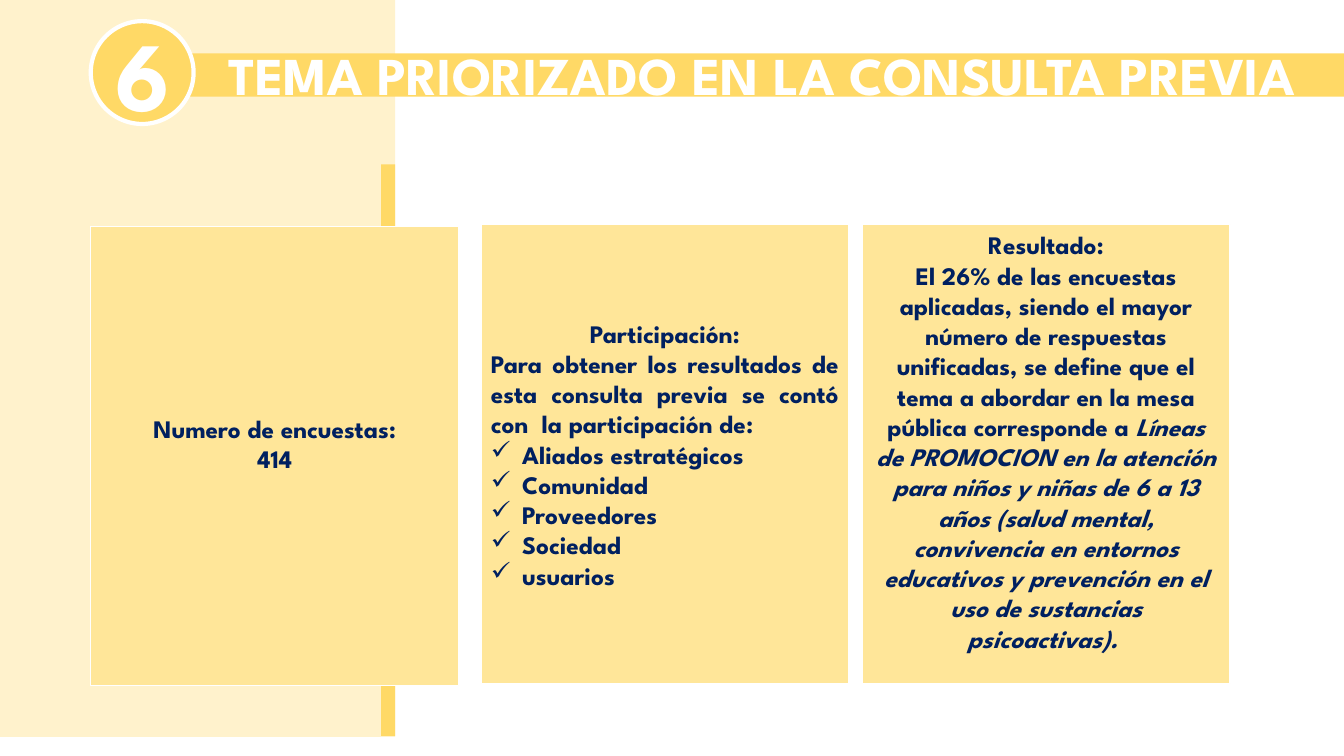
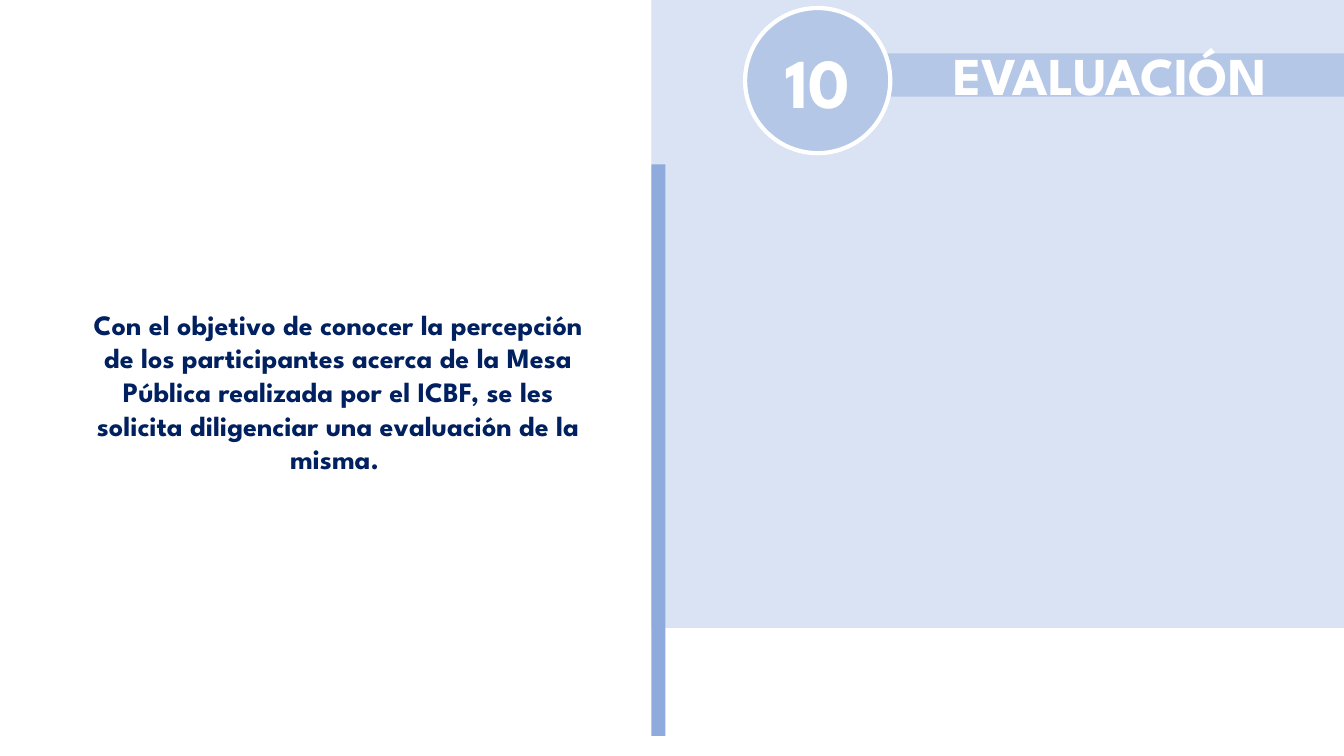
"""Build the consultation-topic and evaluation slides."""
import pptx
import pptx.dml.color
import pptx.enum.shapes
import pptx.enum.text
import pptx.oxml
import pptx.oxml.ns
import pptx.util

Inches = pptx.util.Inches
Align = pptx.enum.text.PP_ALIGN
Shape = pptx.enum.shapes.MSO_SHAPE

THEME = {
    "font": "League Spartan",
    "white": "FFFFFF",
    "navy": "002060",
    "card": "FFE699",
    "yellow": {"panel": "FFF2CC", "stripe": "FFD966", "band": "FFD966"},
    "blue": {"panel": "DAE3F3", "stripe": "8FAADC", "band": "B4C7E7"},
    "title": 38,
    "message": 20,
    "body": 18,
}


def add_block(slide, box, fill, kind=Shape.RECTANGLE, outline=None):
    """Draw a filled shape, with a white outline when a width is given."""
    block = slide.shapes.add_shape(kind, *map(Inches, box))
    block.shadow.inherit = False
    block.fill.solid()
    block.fill.fore_color.rgb = pptx.dml.color.RGBColor.from_string(fill)
    if outline:
        block.line.color.rgb = pptx.dml.color.RGBColor.from_string(THEME["white"])
        block.line.width = pptx.util.Pt(outline)
    else:
        block.line.fill.background()
    block.text_frame.word_wrap = True
    block.text_frame.vertical_anchor = pptx.enum.text.MSO_ANCHOR.MIDDLE
    return block


def add_text(holder, text, size=THEME["body"], color=THEME["navy"],
             align=Align.CENTER, bullet=None, italic_end=""):
    """Append one paragraph, optionally bulleted or ending in italics."""
    frame = holder.text_frame
    frame.word_wrap = True
    paragraph = frame.add_paragraph() if frame.text else frame.paragraphs[0]
    paragraph.alignment = align
    if bullet:
        properties = paragraph._p.get_or_add_pPr()
        properties.set("marL", str(Inches(0.31)))
        properties.set("indent", str(-Inches(0.31)))
        properties.append(pptx.oxml.parse_xml(
            f'<a:buChar {pptx.oxml.ns.nsdecls("a")} char="{bullet}"/>'))
    for part, italic in ((text, None), (italic_end, True)):
        if part:
            run = paragraph.add_run()
            run.text = part
            run.font.name = THEME["font"]
            run.font.size = pptx.util.Pt(size)
            run.font.bold = True
            run.font.italic = italic
            run.font.color.rgb = pptx.dml.color.RGBColor.from_string(color)


deck = pptx.Presentation()
deck.slide_width, deck.slide_height = Inches(13.33), Inches(7.5)

sections = [
    {"colors": THEME["yellow"], "panel": (0, 0, 3.92, 7.31), "stripe": 3.78,
     "band": 1.84, "title_left": 1.93,
     "title": "TEMA PRIORIZADO EN LA CONSULTA PREVIA ",
     "number": "6", "number_size": 70, "badge": (0.9, 0.21, 1.02, 1.02)},
    {"colors": THEME["blue"], "panel": (6.46, 0, 6.87, 6.23), "stripe": 6.46,
     "band": 8.11, "title_left": 8.69, "title": "EVALUACIÓN",
     "number": "10", "number_size": 50, "badge": (7.39, 0.08, 1.44, 1.44)},
]
slides = []
for section in sections:
    slide = deck.slides.add_slide(deck.slide_layouts[6])
    colors = section["colors"]
    add_block(slide, section["panel"], colors["panel"])
    add_block(slide, (section["stripe"], 1.63, 0.14, 5.67), colors["stripe"])
    add_block(slide, (section["band"], 0.53, 13.33 - section["band"], 0.43), colors["band"])
    left = section["title_left"]
    title = slide.shapes.add_textbox(*map(Inches, (left, 0.37, 13.33 - left, 0.74)))
    add_text(title, section["title"], size=THEME["title"], color=THEME["white"])
    badge = add_block(slide, section["badge"], colors["band"], Shape.OVAL, outline=3)
    add_text(badge, section["number"], size=section["number_size"], color=THEME["white"])
    slides.append(slide)

topic, evaluation = slides

surveys, participation, result = [
    add_block(topic, (left, top, 3.65, 4.55), THEME["card"], outline=1)
    for left, top in ((0.9, 2.25), (4.77, 2.23), (8.55, 2.23))]
for raised in (surveys, result):
    raised.text_frame.margin_bottom = Inches(0.3)

add_text(surveys, "Numero de encuestas:")
add_text(surveys, "414")

add_text(participation, "Participación:")
add_text(participation, "Para obtener los resultados de esta consulta previa se contó "
         "con  la participación de:", align=Align.JUSTIFY)
for group in ("Aliados estratégicos", "Comunidad", "Proveedores", "Sociedad", "usuarios"):
    add_text(participation, group, align=Align.JUSTIFY, bullet="✓")

add_text(result, "Resultado:")
add_text(result, "El 26% de las encuestas aplicadas, siendo el mayor número de respuestas "
         "unificadas, se define que el tema a abordar en la mesa pública corresponde a ",
         italic_end="Líneas de PROMOCION en la atención para niños y niñas de 6 a 13 años "
         "(salud mental, convivencia en entornos educativos y prevención en el uso de "
         "sustancias psicoactivas). ")

message = evaluation.shapes.add_textbox(*map(Inches, (0.74, 3, 5.23, 1.78)))
add_text(message, "Con el objetivo de conocer la percepción de los participantes acerca de "
         "la Mesa Pública realizada por el ICBF, se les solicita diligenciar una evaluación "
         "de la misma. ", size=THEME["message"])

deck.save("out.pptx")
